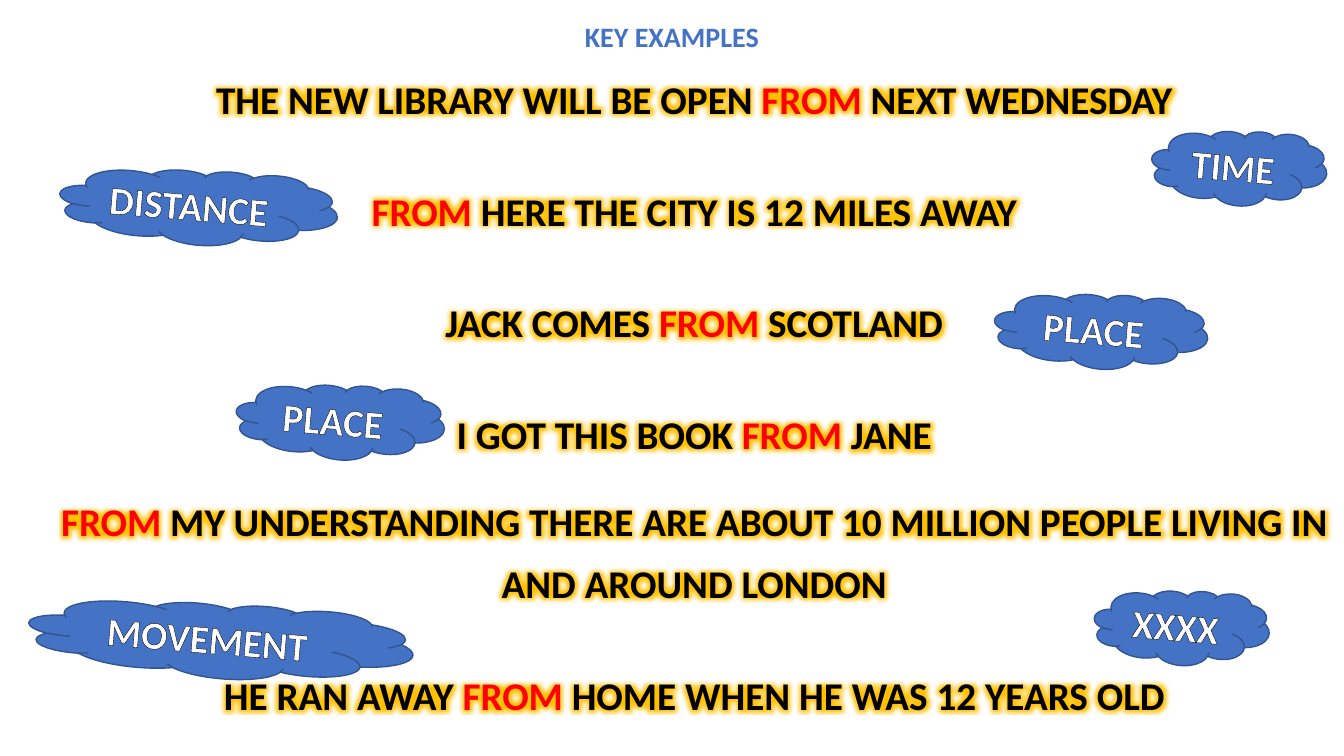
"""Build the slide of key examples for the preposition FROM."""
import lxml.etree
import pptx
import pptx.dml.color
import pptx.enum.shapes
import pptx.enum.text
import pptx.oxml.ns
import pptx.util

Inches = pptx.util.Inches
Pt = pptx.util.Pt
qn = pptx.oxml.ns.qn
RGBColor = pptx.dml.color.RGBColor

BLUE = RGBColor(0x44, 0x72, 0xC4)
DARK_BLUE = RGBColor(0x32, 0x54, 0x91)
GOLD = RGBColor(0xFF, 0xC0, 0x00)
RED = RGBColor(0xFF, 0x00, 0x00)
BLACK = RGBColor(0x00, 0x00, 0x00)
WHITE = RGBColor(0xFF, 0xFF, 0xFF)

FONT = "Calibri"
KEYWORD = "FROM"

EXAMPLES = [
    ("THE NEW LIBRARY WILL BE OPEN FROM NEXT WEDNESDAY", 0),
    ("FROM HERE THE CITY IS 12 MILES AWAY", 36),
    ("JACK COMES FROM SCOTLAND", 36),
    ("I GOT THIS BOOK FROM JANE", 36),
    ("FROM MY UNDERSTANDING THERE ARE ABOUT 10 MILLION PEOPLE LIVING IN", 18),
    ("AND AROUND LONDON", 0),
    ("HE RAN AWAY FROM HOME WHEN HE WAS 12 YEARS OLD", 36),
]

CLOUDS = [
    ("TIME", 11.42, 1.29, 1.74),
    ("DISTANCE", 0.59, 1.68, 2.76),
    ("PLACE", 9.86, 2.91, 2.12),
    ("PLACE", 2.34, 3.81, 2.07),
    ("XXXX", 10.85, 5.85, 1.74),
    ("MOVEMENT", 0.28, 5.98, 3.82),
]


def place(shape, left, top, width, height):
    """Move and size a shape, in inches."""
    shape.left, shape.top = Inches(left), Inches(top)
    shape.width, shape.height = Inches(width), Inches(height)


def add_color(parent, color):
    """Append a colour element to an XML parent."""
    lxml.etree.SubElement(parent, qn("a:srgbClr"), val=str(color))


def format_run(run, size, color, outlined=False, glowing=False):
    """Set the font of a run, with an optional outline and glow."""
    run.font.name = FONT
    run.font.size = Pt(size)
    run.font.bold = True
    run.font.color.rgb = color
    properties = run.font._element
    if glowing:
        effects = lxml.etree.Element(qn("a:effectLst"))
        glow = lxml.etree.SubElement(effects, qn("a:glow"), rad=str(Pt(8)))
        add_color(glow, GOLD)
        properties.find(qn("a:solidFill")).addnext(effects)
    if outlined:
        outline = lxml.etree.Element(qn("a:ln"), w=str(Pt(0.75)))
        add_color(lxml.etree.SubElement(outline, qn("a:solidFill")), BLACK)
        properties.insert(0, outline)


def add_heading(heading):
    """Fill the title placeholder."""
    place(heading, 5.66, 0.14, 2.01, 0.44)
    frame = heading.text_frame
    frame.text = "KEY EXAMPLES"
    frame.word_wrap = False
    frame.auto_size = pptx.enum.text.MSO_AUTO_SIZE.NONE
    format_run(frame.paragraphs[0].runs[0], 20, BLUE, outlined=True)


def write_example(paragraph, sentence, space_before):
    """Write one centred sentence with its keyword in red."""
    properties = paragraph._p.get_or_add_pPr()
    properties.set("marL", "0")
    properties.set("indent", "0")
    lxml.etree.SubElement(properties, qn("a:buNone"))
    paragraph.alignment = pptx.enum.text.PP_ALIGN.CENTER
    paragraph.line_spacing = 1.07
    paragraph.space_before = Pt(space_before)
    paragraph.space_after = Pt(8)
    for part in sentence.partition(KEYWORD):
        if part:
            run = paragraph.add_run()
            run.text = part
            is_keyword = part == KEYWORD
            format_run(run, 28, RED if is_keyword else BLACK, is_keyword, glowing=True)


def add_examples(examples):
    """Fill the body placeholder with the example sentences."""
    place(examples, 0.2, 0.66, 13.37, 6.76)
    frame = examples.text_frame
    frame.word_wrap = True
    frame.auto_size = pptx.enum.text.MSO_AUTO_SIZE.NONE
    frame.vertical_anchor = pptx.enum.text.MSO_ANCHOR.TOP
    for index, (sentence, space_before) in enumerate(EXAMPLES):
        paragraph = frame.add_paragraph() if index else frame.paragraphs[0]
        write_example(paragraph, sentence, space_before)


def add_cloud(slide, label, left, top, width):
    """Add a tilted cloud that names a use of the keyword."""
    cloud = slide.shapes.add_shape(
        pptx.enum.shapes.MSO_SHAPE.CLOUD,
        Inches(left), Inches(top), Inches(width), Inches(0.75))
    cloud.rotation = 4.7
    cloud.shadow.inherit = False
    cloud.fill.solid()
    cloud.fill.fore_color.rgb = BLUE
    cloud.line.color.rgb = DARK_BLUE
    cloud.line.width = Pt(1)
    frame = cloud.text_frame
    frame.text = label
    frame.word_wrap = False
    frame.vertical_anchor = pptx.enum.text.MSO_ANCHOR.MIDDLE
    frame.paragraphs[0].alignment = pptx.enum.text.PP_ALIGN.CENTER
    format_run(frame.paragraphs[0].runs[0], 28, WHITE, outlined=True)


def main():
    """Build and save the slide."""
    deck = pptx.Presentation()
    deck.slide_width, deck.slide_height = Inches(13.33), Inches(7.5)
    slide = deck.slides.add_slide(deck.slide_layouts[1])
    add_heading(slide.shapes.title)
    add_examples(slide.placeholders[1])
    for cloud in CLOUDS:
        add_cloud(slide, *cloud)
    deck.save("out.pptx")


if __name__ == "__main__":
    main()
